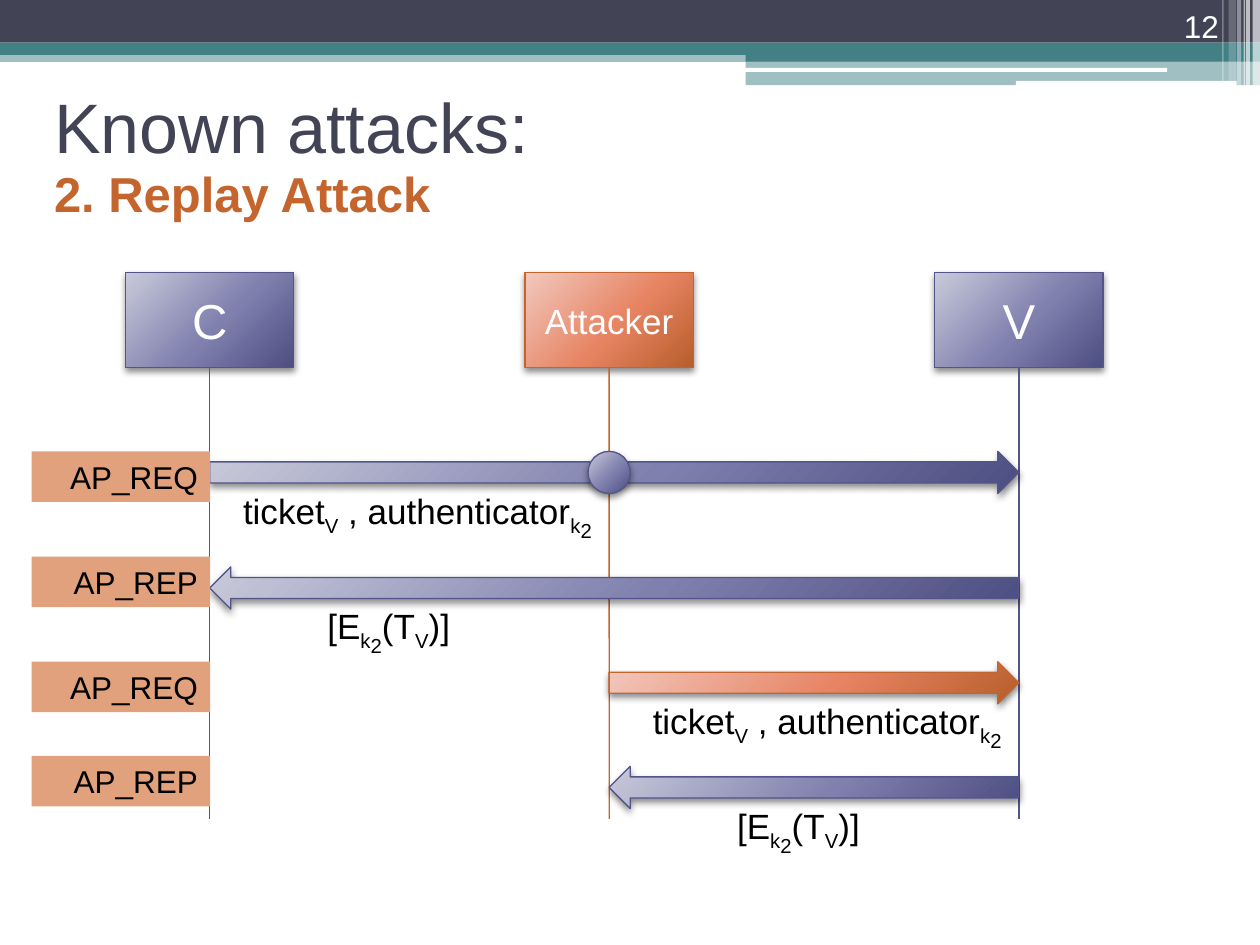
import pptx
import pptx.dml.color
import pptx.enum.shapes
import pptx.enum.text
import pptx.oxml
import pptx.oxml.ns
import pptx.util

Cm = pptx.util.Cm
Pt = pptx.util.Pt
RGBColor = pptx.dml.color.RGBColor
SHAPE = pptx.enum.shapes.MSO_SHAPE
ALIGN = pptx.enum.text.PP_ALIGN
ANCHOR = pptx.enum.text.MSO_ANCHOR
AUTO_SIZE = pptx.enum.text.MSO_AUTO_SIZE
qn = pptx.oxml.ns.qn
DRAWING = pptx.oxml.ns.nsdecls("a")

WHITE = RGBColor(0xFF, 0xFF, 0xFF)
BLACK = RGBColor(0x00, 0x00, 0x00)
SLATE = RGBColor(0x42, 0x44, 0x56)
TEAL = RGBColor(0x43, 0x80, 0x86)
RUST = RGBColor(0xC4, 0x65, 0x2D)
VIOLET = RGBColor(0x53, 0x54, 0x8A)
SAND = RGBColor(0xE1, 0xA1, 0x7C)

# Gradient stops for each outline colour
STOPS = {
    VIOLET: (RGBColor(0xC9, 0xC9, 0xDA), RGBColor(0x7F, 0x80, 0xAE), RGBColor(0x4D, 0x4E, 0x81)),
    RUST: (RGBColor(0xF2, 0xC9, 0xBF), RGBColor(0xE7, 0x84, 0x63), RGBColor(0xB7, 0x5E, 0x2A)),
}

# Diagram measures in centimetres
CLIENT_X, ATTACKER_X, SERVER_X = 4.23, 12.28, 20.54
BOX_TOP, BOX_WIDTH, BOX_HEIGHT = 5.5, 3.39, 1.91
LIFELINE_END = 16.51
ARROW_HEIGHT = 0.85
TEXT_OFFSET = 0.64

# Runs as (text, baseline in thousandths of a percent)
REQUEST = [("ticket", 0), ("V", -25000), (" , authenticator", 0), ("k", -25000), ("2", -40000)]
REPLY = [("[E", 0), ("k", -25000), ("2", -40000), ("(T", 0), ("V", -25000), (")]", 0)]

# Banner bars: shape, left, top, width, height, colour, opacity
BANNER = [
    (SHAPE.RECTANGLE, 0, 1.02, 25.4, 0.23, TEAL, 50),
    (SHAPE.RECTANGLE, 0, 0, 25.4, 0.86, SLATE, 100),
    (SHAPE.RECTANGLE, 0, 0.86, 25.4, 0.25, TEAL, 100),
    (SHAPE.RECTANGLE, 15.03, 0.99, 10.37, 0.25, TEAL, 100),
    (SHAPE.RECTANGLE, 15.03, 1.22, 10.37, 0.5, TEAL, 50),
    (SHAPE.ROUNDED_RECTANGLE, 15.02, 1.37, 8.51, 0.08, WHITE, 100),
    (SHAPE.ROUNDED_RECTANGLE, 20.48, 1.63, 4.45, 0.1, WHITE, 100),
    (SHAPE.RECTANGLE, 25.25, 0, 0.15, 1.73, WHITE, 65),
    (SHAPE.RECTANGLE, 25.12, 0, 0.08, 1.73, WHITE, 65),
    (SHAPE.RECTANGLE, 25.07, 0, 0.03, 1.73, WHITE, 60),
    (SHAPE.RECTANGLE, 24.94, 0, 0.08, 1.73, WHITE, 40),
    (SHAPE.RECTANGLE, 24.77, 0, 0.15, 1.63, WHITE, 20),
    (SHAPE.RECTANGLE, 24.64, 0, 0.03, 1.63, WHITE, 30),
]


def write_text(shape, runs, size, color, align=ALIGN.LEFT, bold=False, **frame_format):
    """Fill a shape with one paragraph of formatted runs."""
    frame_values = {"word_wrap": True, "vertical_anchor": ANCHOR.TOP, **frame_format}
    for name, value in frame_values.items():
        setattr(shape.text_frame, name, value)
    paragraph = shape.text_frame.paragraphs[0]
    paragraph.alignment = align
    for text, baseline in runs:
        run = paragraph.add_run()
        run.text = text
        for name, value in {"name": "Arial", "size": Pt(size), "bold": bold}.items():
            setattr(run.font, name, value)
        run.font.color.rgb = color
        if baseline:
            run._r.get_or_add_rPr().set("baseline", str(baseline))
    return paragraph


def add_text(slide, left, top, width, height, runs, size, color, **text_format):
    box = slide.shapes.add_textbox(Cm(left), Cm(top), Cm(width), Cm(height))
    return write_text(box, runs, size, color, **text_format)


def add_flat(slide, kind, left, top, width, height, color, opacity=100):
    """Add a plain shape without outline."""
    shape = slide.shapes.add_shape(kind, Cm(left), Cm(top), Cm(width), Cm(height))
    shape.shadow.inherit = False
    shape.fill.solid()
    shape.fill.fore_color.rgb = color
    shape.line.fill.background()
    if opacity < 100:
        fill_color = shape._element.spPr.find(qn("a:solidFill")).find(qn("a:srgbClr"))
        fill_color.append(pptx.oxml.parse_xml(f'<a:alpha {DRAWING} val="{opacity * 1000}"/>'))
    return shape


def add_glossy(slide, kind, left, top, width, height, color, flip=False):
    """Add an outlined shape with a radial gradient and a soft shadow."""
    shape = slide.shapes.add_shape(kind, Cm(left), Cm(top), Cm(width), Cm(height))
    shape.line.color.rgb = color
    shape.line.width = Pt(0.75)
    shape.shadow.inherit = False
    properties = shape._element.spPr
    stops = "".join(
        f'<a:gs pos="{position}"><a:srgbClr val="{stop}"/></a:gs>'
        for position, stop in zip((0, 55000, 100000), STOPS[color])
    )
    properties.find(qn("a:prstGeom")).addnext(pptx.oxml.parse_xml(
        f'<a:gradFill {DRAWING} rotWithShape="1"><a:gsLst>{stops}</a:gsLst><a:path path="circle">'
        '<a:fillToRect l="-40000" t="-90000" r="140000" b="190000"/></a:path></a:gradFill>'
    ))
    properties.find(qn("a:effectLst")).append(pptx.oxml.parse_xml(
        f'<a:outerShdw {DRAWING} blurRad="{Pt(4)}" dist="{Pt(2)}" dir="5400000" rotWithShape="0">'
        '<a:srgbClr val="000000"><a:alpha val="45000"/></a:srgbClr></a:outerShdw>'
    ))
    if flip:
        properties.find(qn("a:xfrm")).set("flipH", "1")
    return shape


def add_participant(slide, center, name, size, color):
    box = add_glossy(slide, SHAPE.RECTANGLE, center - BOX_WIDTH / 2, BOX_TOP,
                     BOX_WIDTH, BOX_HEIGHT, color)
    write_text(box, [(name, 0)], size, WHITE, align=ALIGN.CENTER, vertical_anchor=ANCHOR.MIDDLE)
    return box


def add_lifeline(slide, box, center, color):
    line = slide.shapes.add_connector(pptx.enum.shapes.MSO_CONNECTOR.STRAIGHT, Cm(center),
                                      Cm(BOX_TOP + BOX_HEIGHT), Cm(center), Cm(LIFELINE_END))
    line.begin_connect(box, 2)
    line.line.color.rgb = color
    line.line.width = Pt(0.75)
    line._element.spPr.append(pptx.oxml.parse_xml(f"<a:effectLst {DRAWING}/>"))


def add_label(slide, top, text):
    label = add_flat(slide, SHAPE.RECTANGLE, 0.64, top, 3.6, 1.02, SAND)
    write_text(label, [(text, 0)], 18, BLACK, align=ALIGN.RIGHT,
               auto_size=AUTO_SIZE.SHAPE_TO_FIT_TEXT)


def add_heading(slide):
    title = slide.shapes.title
    for name, value in {"left": 0.84, "top": 1.27, "width": 22.86, "height": 2.54}.items():
        setattr(title, name, Cm(value))
    write_text(title, [("Known attacks:", 0)], 40, SLATE,
               vertical_anchor=ANCHOR.MIDDLE, auto_size=AUTO_SIZE.NONE)
    add_text(slide, 0.84, 3.18, 8.2, 1.45, [("2. Replay Attack", 0)], 28, RUST, bold=True,
             word_wrap=False, auto_size=AUTO_SIZE.SHAPE_TO_FIT_TEXT)
    add_text(slide, 22.71, 0, 2.11, 1.02, [("12", 0)], 18, WHITE,
             align=ALIGN.RIGHT, vertical_anchor=ANCHOR.BOTTOM)


def main():
    presentation = pptx.Presentation()
    presentation.slide_width, presentation.slide_height = Cm(25.4), Cm(19.05)
    slide = presentation.slides.add_slide(presentation.slide_layouts[5])

    # Banner and headings
    for bar in BANNER:
        add_flat(slide, *bar)
    add_heading(slide)

    # Participants and their lifelines
    participants = [(CLIENT_X, "C", 28, VIOLET), (ATTACKER_X, "Attacker", 20, RUST),
                    (SERVER_X, "V", 28, VIOLET)]
    boxes = [add_participant(slide, *participant) for participant in participants]
    for box, (center, _, _, color) in zip(boxes, participants):
        add_lifeline(slide, box, center, color)

    # Messages: start, top, colour, points left, label, label top, runs, text left, text width
    messages = [
        (CLIENT_X, 9.1, VIOLET, False, "AP_REQ", 9.1, REQUEST, 4.65, 10.8),
        (CLIENT_X, 11.43, VIOLET, True, "AP_REP", 11.22, REPLY, 6.35, 5.08),
        (ATTACKER_X, 13.34, RUST, False, "AP_REQ", 13.34, REQUEST, 12.91, 7.62),
        (ATTACKER_X, 15.45, VIOLET, True, "AP_REP", 15.24, REPLY, 14.61, 4.23),
    ]
    for start, top, color, flip, label, label_top, runs, text_left, text_width in messages:
        add_glossy(slide, SHAPE.RIGHT_ARROW, start, top, SERVER_X - start, ARROW_HEIGHT, color, flip)
        add_label(slide, label_top, label)
        add_text(slide, text_left, top + TEXT_OFFSET, text_width, 1.11, runs, 20, BLACK,
                 auto_size=AUTO_SIZE.SHAPE_TO_FIT_TEXT)

    # Interception point on the first request
    add_glossy(slide, SHAPE.OVAL, ATTACKER_X - ARROW_HEIGHT / 2, 9.1,
               ARROW_HEIGHT, ARROW_HEIGHT, VIOLET)

    presentation.save("out.pptx")


if __name__ == "__main__":
    main()
